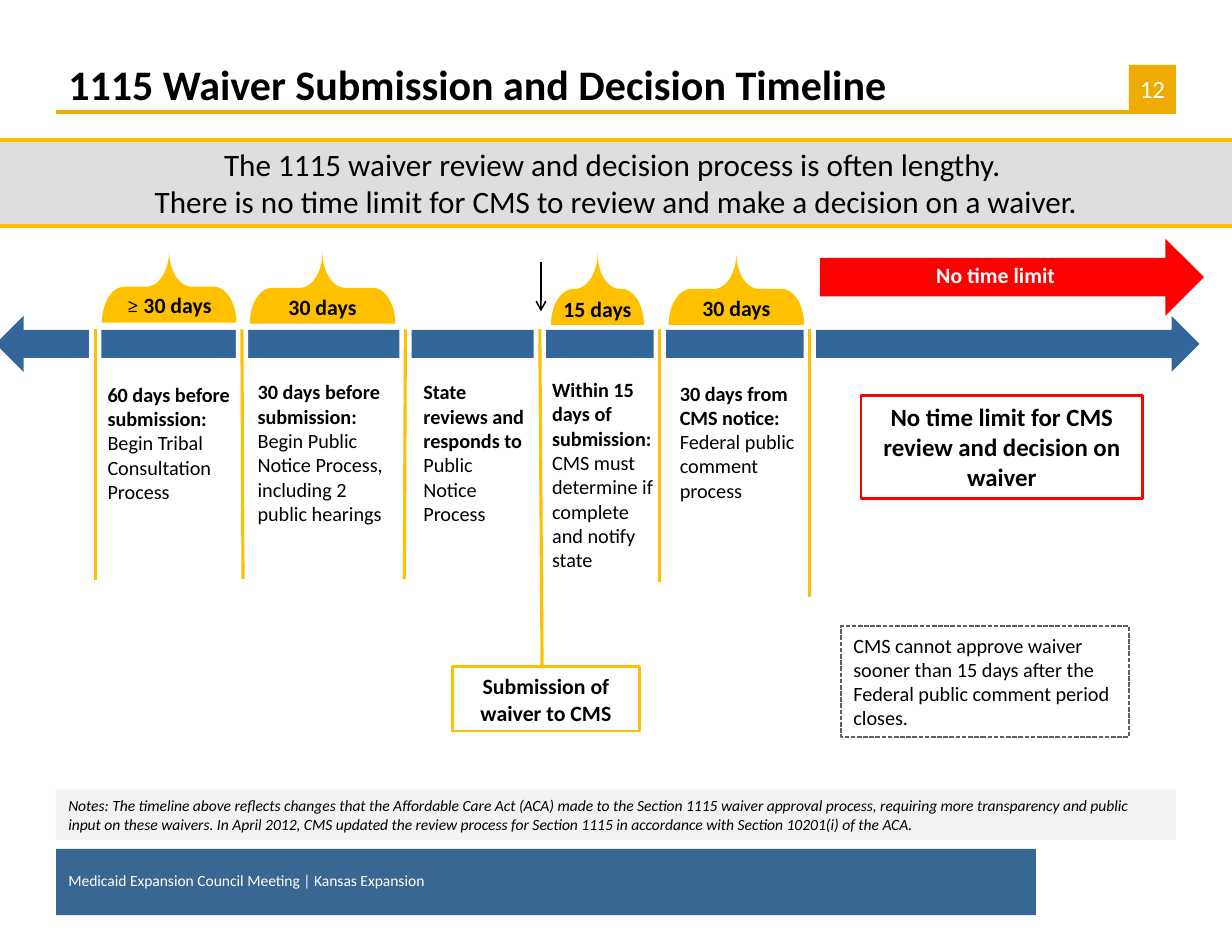
from lxml import etree
from pptx import Presentation
from pptx.dml.color import RGBColor
from pptx.enum.dml import MSO_LINE
from pptx.enum.shapes import MSO_CONNECTOR, MSO_SHAPE
from pptx.enum.text import MSO_ANCHOR as ANCHOR, PP_ALIGN as ALIGN
from pptx.oxml.ns import qn
from pptx.util import Inches, Pt

COLORS = {
    "black": "000000", "white": "FFFFFF", "blue": "336699", "footer": "386794",
    "amber": "F0AB00", "yellow": "FFC000", "red": "FF0000", "band": "DEDEE1",
    "notes": "F2F2F2", "slate": "5C5E66",
}
WIDE = (0.11, 0.06)
NORMAL = (0.1, 0.05)


def rgb(name):
    return RGBColor.from_string(COLORS[name])


def write(shape, *paragraphs, size=14, color="black", bold=False, italic=False,
          align=ALIGN.LEFT, anchor=ANCHOR.TOP, inset=WIDE, wrap=True, spacing=None):
    """Each paragraph is a string or a list of (text, format overrides) runs."""
    frame = shape.text_frame
    frame.word_wrap = wrap
    frame.vertical_anchor = anchor
    frame.margin_left = frame.margin_right = Inches(inset[0])
    frame.margin_top = frame.margin_bottom = Inches(inset[1])
    for index, content in enumerate(paragraphs):
        paragraph = frame.add_paragraph() if index else frame.paragraphs[0]
        paragraph.alignment = align
        if spacing:
            paragraph.line_spacing = spacing
        for text, style in [(content, {})] if isinstance(content, str) else content:
            for number, line in enumerate(text.split("\n")):
                if number:
                    paragraph.add_line_break()
                run = paragraph.add_run()
                run.text = line
                run.font.name = style.get("font", "Calibri")
                run.font.size = Pt(size)
                run.font.bold = style.get("bold", bold)
                run.font.italic = italic
                run.font.color.rgb = rgb(color)


def add_text(slide, box, *paragraphs, **style):
    write(slide.shapes.add_textbox(*map(Inches, box)), *paragraphs, **style)


def add_box(slide, box, fill=None, line=None, width=1.5, kind=MSO_SHAPE.RECTANGLE):
    shape = slide.shapes.add_shape(kind, *map(Inches, box))
    shape.shadow.inherit = False
    if fill:
        shape.fill.solid()
        shape.fill.fore_color.rgb = rgb(fill)
    else:
        shape.fill.background()
    if line:
        shape.line.color.rgb = rgb(line)
        shape.line.width = Pt(width)
    else:
        shape.line.fill.background()
    return shape


def add_line(slide, start, end, color="yellow", width=2, arrow=False):
    line = slide.shapes.add_connector(MSO_CONNECTOR.STRAIGHT, *map(Inches, start + end))
    line.line.color.rgb = rgb(color)
    line.line.width = Pt(width)
    if arrow:
        etree.SubElement(line.line._get_or_add_ln(), qn("a:tailEnd"), type="arrow")
    etree.SubElement(line._element.spPr, qn("a:effectLst"))


def add_header(slide, box, title, number):
    left, top, width, height = box
    tab = 0.42
    right, base = left + width, top + height
    add_line(slide, (left, base), (right, base), "amber")
    badge = add_box(slide, (right - tab, base - tab, tab, tab), "amber")
    write(badge, number, size=16, color="white", align=ALIGN.CENTER,
          anchor=ANCHOR.MIDDLE, inset=(0, 0), wrap=False)
    add_text(slide, (left, top, width - tab, height + 0.03), title,
             size=27, bold=True, anchor=ANCHOR.BOTTOM)


def add_band(slide, box, message):
    left, top, width, height = box
    write(add_box(slide, box, "band"), message, size=20, align=ALIGN.CENTER, inset=NORMAL)
    for y in (top, top + height):
        add_line(slide, (left, y), (left + width, y), width=2.25)


def add_duration(slide, box, label, inset=NORMAL):
    """A brace lying on its side, with its label in the lower half."""
    left, top, width, height = box
    # The brace is upright before it turns about its centre
    upright = (left + (width - height) / 2, top + (height - width) / 2, height, width)
    brace = add_box(slide, upright, "yellow", kind=MSO_SHAPE.RIGHT_BRACE)
    brace.adjustments[0] = 0.314
    brace.rotation = 270
    add_text(slide, (left - 0.1, top + 0.32, width + 0.2, 0.34), label,
             bold=True, align=ALIGN.CENTER, inset=inset)


def add_timeline(slide, box, dividers, steps):
    left, top, width, height = box
    add_box(slide, box, "blue", kind=MSO_SHAPE.LEFT_RIGHT_ARROW)
    # White gaps split the arrow into stages, each with a divider
    for x, foot, bottom in dividers:
        add_box(slide, (x - 0.055, top, 0.11, height), "white")
        add_line(slide, (x, top + 0.12), (foot, bottom))
    # Descriptions below the stages
    for x, y, step_width, paragraphs in steps:
        add_text(slide, (x, y, step_width, 1.42), *paragraphs, size=13)


def add_no_limit_arrow(slide, box, label):
    left, top, _, height = box
    add_box(slide, box, "red", kind=MSO_SHAPE.RIGHT_ARROW)
    add_text(slide, (left + 0.37, top + 0.16, 2.4, 0.35), label, color="white",
             bold=True, align=ALIGN.CENTER, inset=NORMAL)


def add_footer(slide, box, text):
    left, top, _, height = box
    add_box(slide, box, "footer")
    add_text(slide, (left, top + 0.17, 7.08, 0.25), text, size=10, color="white",
             anchor=ANCHOR.MIDDLE, inset=(0.11, 0), spacing=0.8)


def heading_and_body(heading, body):
    return [[(heading, {"bold": True})], body]


def main():
    deck = Presentation()
    deck.slide_width, deck.slide_height = Inches(11), Inches(8.5)
    slide = deck.slides.add_slide(deck.slide_layouts[6])

    # Header and key message
    add_header(slide, (0.5, 0.45, 10, 0.55), "1115 Waiver Submission and Decision Timeline", "12")
    add_band(slide, (0, 1.25, 11, 0.77),
             "The 1115 waiver review and decision process is often lengthy. \n"
             "There is no time limit for CMS to review and make a decision on a waiver.")

    # Timeline: dividers as (top x, bottom x, bottom y)
    dividers = [(0.85, 0.85, 5.18), (2.16, 2.17, 5.17), (3.62, 3.61, 5.17),
                (4.82, 4.84, 5.94), (5.89, 5.89, 5.2), (7.23, 7.23, 5.33)]
    steps = [
        (0.85, 3.35, 1.48, heading_and_body(
            "60 days before submission:", "Begin Tribal Consultation Process")),
        (2.19, 3.33, 1.44, heading_and_body(
            "30 days before submission:",
            "Begin Public Notice Process, including 2 public hearings")),
        (3.67, 3.33, 1.15, [[("State reviews and responds to ", {"bold": True}),
                             ("Public Notice Process", {})]]),
        (4.82, 3.31, 1.13, heading_and_body(
            "Within 15 days of submission:",
            "CMS must determine if complete and notify state")),
        (5.96, 3.34, 1.25, heading_and_body(
            "30 days from CMS notice:", "Federal public comment process")),
    ]
    add_timeline(slide, (-0.04, 2.82, 10.75, 0.5), dividers, steps)

    # Durations above the stages
    at_least_30 = [("≥ ", {"font": "Cambria", "bold": False}), ("30 days", {})]
    add_duration(slide, (0.91, 2.24, 1.2, 0.64), at_least_30)
    add_duration(slide, (2.23, 2.25, 1.3, 0.64), "30 days")
    add_duration(slide, (4.92, 2.26, 0.83, 0.64), "15 days", inset=WIDE)
    add_duration(slide, (5.97, 2.26, 1.21, 0.64), "30 days")
    add_no_limit_arrow(slide, (7.32, 2.13, 3.43, 0.69), "No time limit")

    # Submission marker and callouts
    add_line(slide, (4.83, 2.34), (4.83, 2.78), "black", 1, arrow=True)
    write(add_box(slide, (4.04, 5.95, 1.67, 0.58), line="yellow"),
          "Submission of waiver to CMS", bold=True, align=ALIGN.CENTER)
    write(add_box(slide, (7.69, 3.53, 2.51, 0.92), line="red"),
          "No time limit for CMS review and decision on waiver",
          size=16, bold=True, align=ALIGN.CENTER)
    caveat = add_box(slide, (7.51, 5.59, 2.57, 0.99), line="slate", width=1)
    caveat.line.dash_style = MSO_LINE.SQUARE_DOT
    write(caveat, "CMS cannot approve waiver sooner than 15 days after the "
          "Federal public comment period closes.", size=13)

    # Notes and footer
    write(add_box(slide, (0.5, 7.05, 10, 0.45), "notes"),
          "Notes: The timeline above reflects changes that the Affordable Care Act (ACA) "
          "made to the Section 1115 waiver approval process, requiring more transparency "
          "and public input on these waivers. In April 2012, CMS updated the review process "
          "for Section 1115 in accordance with Section 10201(i) of the ACA.",
          size=10, italic=True, anchor=ANCHOR.BOTTOM)
    add_footer(slide, (0.5, 7.58, 8.75, 0.59),
               "Medicaid Expansion Council Meeting | Kansas Expansion")
    deck.save("out.pptx")


if __name__ == "__main__":
    main()
